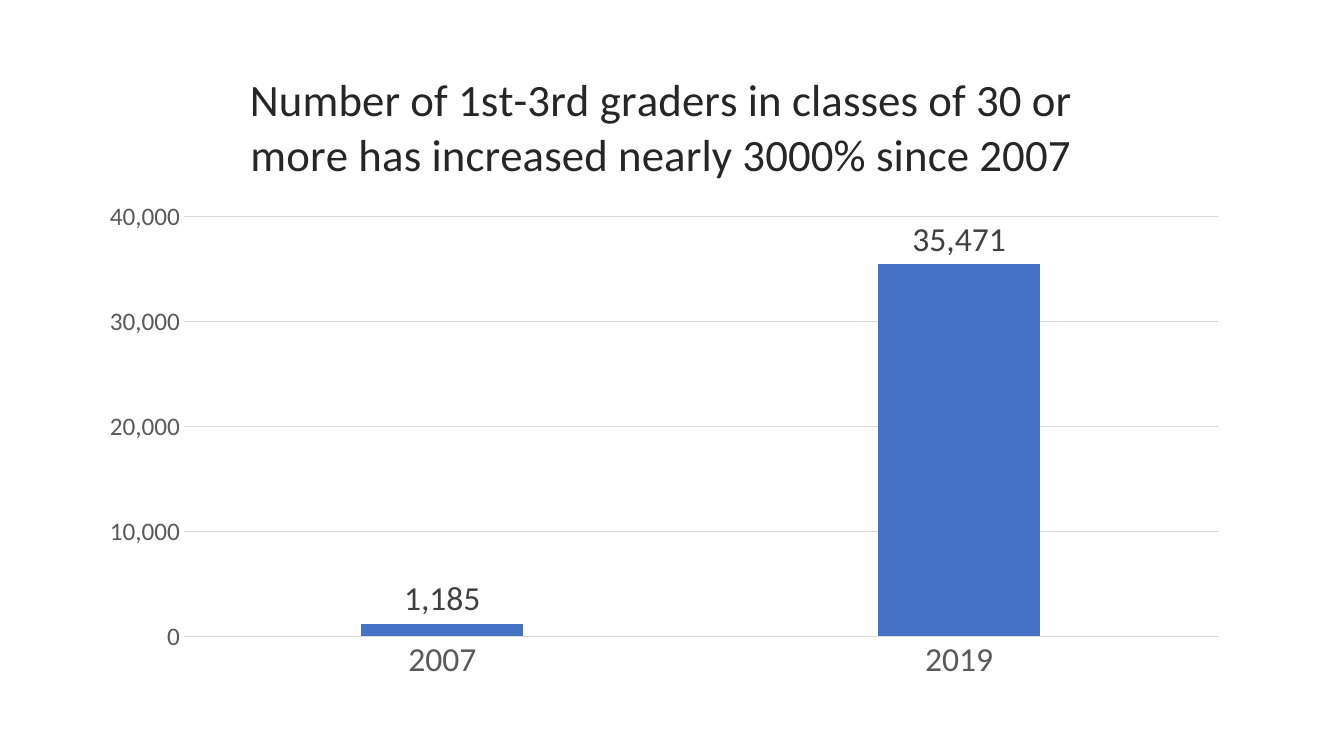
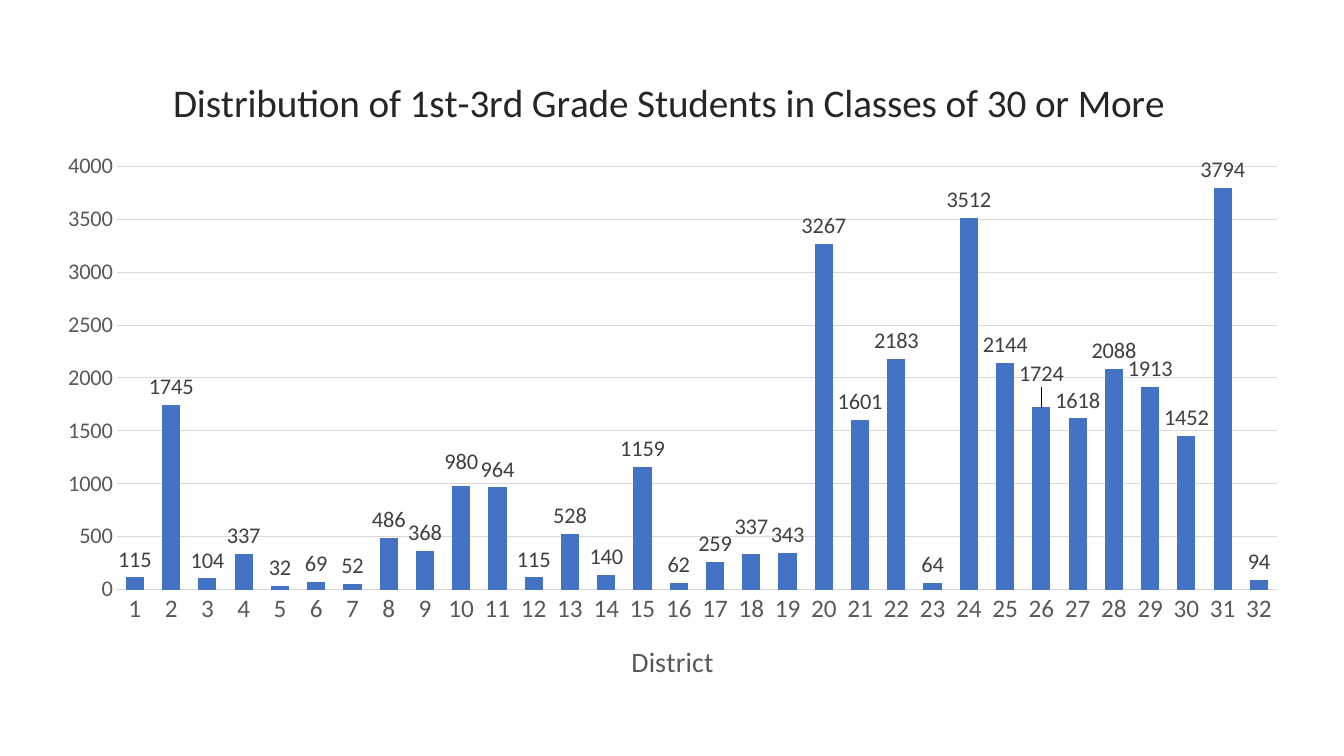
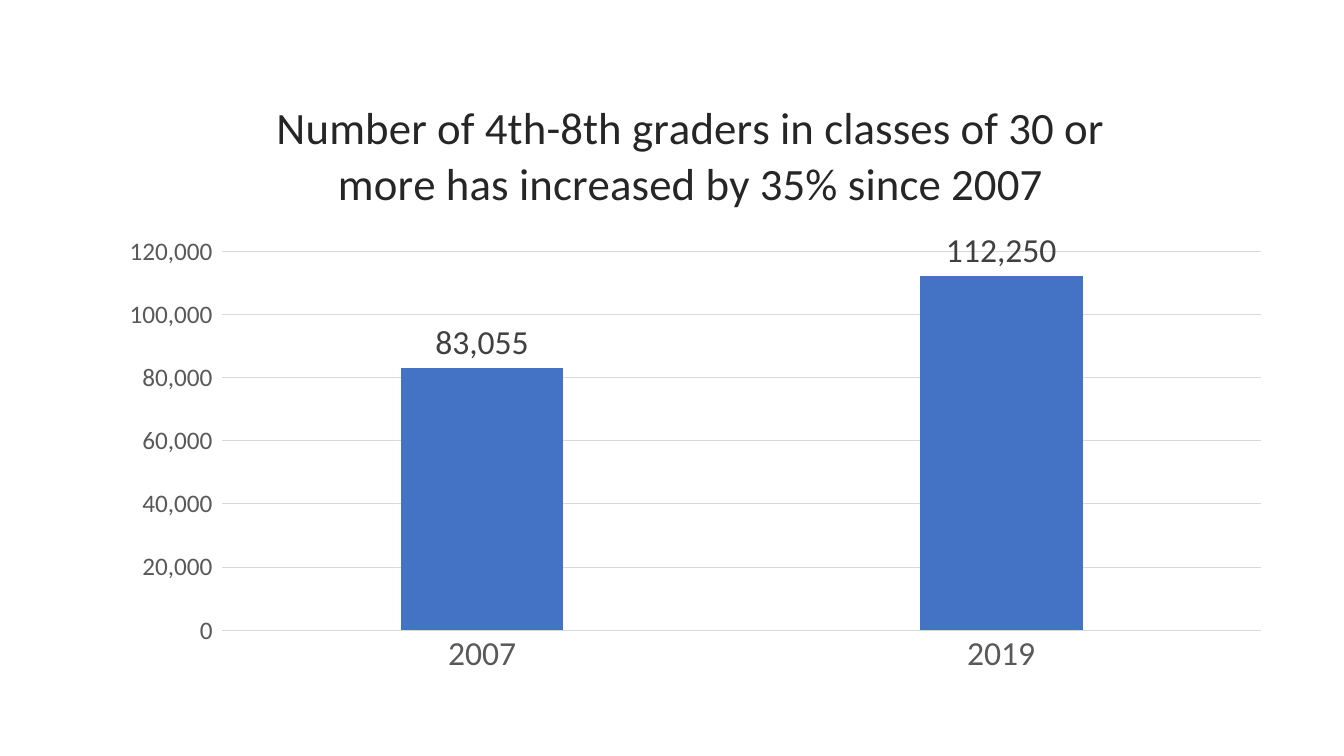
from lxml.etree import SubElement
from pptx import Presentation
from pptx.chart.data import CategoryChartData
from pptx.dml.color import RGBColor
from pptx.enum.chart import XL_CHART_TYPE, XL_LABEL_POSITION, XL_TICK_MARK
from pptx.oxml import parse_xml
from pptx.oxml.ns import nsdecls, qn
from pptx.util import Cm, Pt

# Shared style
FONT = "Calibri"
COLORS = {
    "title": "262626",
    "axis": "595959",
    "label": "404040",
    "grid": "D9D9D9",
    "bar": "4472C4",
}
THOUSANDS = "#,##0"

DISTRICT_STUDENTS = [
    115, 1745, 104, 337, 32, 69, 52, 486, 368, 980, 964,
    115, 528, 140, 1159, 62, 259, 337, 343, 3267, 1601, 2183,
    64, 3512, 2144, 1724, 1618, 2088, 1913, 1452, 3794, 94,
]
# Percent of chart height by which crowded labels move, by point index
RAISED_LABELS = {9: -0.9, 17: -1.4, 25: -2.4}


def color(name):
    return RGBColor.from_string(COLORS[name])


def style_font(font, size, color_name):
    font.name = FONT
    font.size = Pt(size)
    font.bold = False
    font.color.rgb = color(color_name)


def style_line(line):
    line.color.rgb = color("grid")
    line.width = Pt(0.75)


def set_layout(parent, index, inner=False, edge=True, **percents):
    """Give a chart part a manual layout, in percent of the chart."""
    for old in parent.findall(qn("c:layout")):
        parent.remove(old)
    layout = parse_xml(f"<c:layout {nsdecls('c')}/>")
    manual = SubElement(layout, qn("c:manualLayout"))
    if inner:
        SubElement(manual, qn("c:layoutTarget")).set("val", "inner")
    if edge:
        for mode in ("xMode", "yMode"):
            SubElement(manual, qn(f"c:{mode}")).set("val", "edge")
    for key, percent in percents.items():
        SubElement(manual, qn(f"c:{key}")).set("val", f"{percent / 100:.3f}")
    parent.insert(index, layout)


def set_title(owner, text, size, color_name):
    """Write the title of a chart or an axis."""
    frame = owner.text_frame
    frame.text = text
    style_font(frame.paragraphs[0].font, size, color_name)


def style_axes(chart, cat_size, value_size, maximum, step, number_format, tick):
    categories, values = chart.category_axis, chart.value_axis
    for axis, size in ((categories, cat_size), (values, value_size)):
        style_font(axis.tick_labels.font, size, "axis")
        axis.major_tick_mark = axis.minor_tick_mark = XL_TICK_MARK.NONE
    style_line(categories.format.line)
    values.format.line.fill.background()
    values.major_tick_mark = tick
    values.minimum_scale, values.maximum_scale = 0, maximum
    values.major_unit = step
    values.tick_labels.number_format = number_format
    values.tick_labels.number_format_is_linked = False
    values.has_major_gridlines = True
    style_line(values.major_gridlines.format.line)


def add_labels(series, size, number_format):
    labels = series.data_labels
    labels.show_value = True
    labels.position = XL_LABEL_POSITION.OUTSIDE_END
    labels.number_format = number_format
    labels.number_format_is_linked = False
    style_font(labels.font, size, "label")


def raise_labels(chart, series, shifts, size):
    """Move single labels up, clear of their neighbours."""
    for index, shift in shifts.items():
        label = series.points[index].data_label
        label.position = XL_LABEL_POSITION.OUTSIDE_END
        style_font(label.font, size, "label")
        element = chart.element.xpath(f"//c:dLbl[c:idx/@val='{index}']")[0]
        set_layout(element, 1, edge=False, x=0, y=shift)


def add_column_slide(deck, place, title, title_size, title_at, plot_at,
                     names, values, maximum, step, *, cat_size=24,
                     value_size=18, label_size=24, number_format=THOUSANDS,
                     gap=219, overlap=-27, tick=XL_TICK_MARK.NONE):
    """Add a slide that holds one column chart, and return the chart."""
    page = deck.slides.add_slide(deck.slide_layouts[6])
    data = CategoryChartData(number_format=number_format)
    data.categories = names
    data.add_series("Series 1", values)
    chart = page.shapes.add_chart(
        XL_CHART_TYPE.COLUMN_CLUSTERED, *map(Cm, place), data).chart
    chart.font.name = FONT
    chart.has_legend = False

    # Title and plot area
    set_title(chart.chart_title, title, title_size, "title")
    chart.chart_title.include_in_layout = False
    set_layout(chart.element.xpath("./c:chart/c:title")[0], 1,
               **dict(zip("xy", title_at)))
    set_layout(chart.element.xpath("./c:chart/c:plotArea")[0], 0, inner=True,
               **dict(zip("xywh", plot_at)))

    # Axes and columns
    style_axes(chart, cat_size, value_size, maximum, step, number_format, tick)
    plot = chart.plots[0]
    plot.gap_width, plot.overlap = gap, overlap
    plot.vary_by_categories = False
    series = plot.series[0]
    series.format.fill.solid()
    series.format.fill.fore_color.rgb = color("bar")
    add_labels(series, label_size, number_format)
    return chart


def main():
    deck = Presentation()
    deck.slide_width, deck.slide_height = Cm(33.87), Cm(19.05)
    years = ["2007", "2019"]

    # Grades 1 to 3
    add_column_slide(
        deck, (2.16, 1.24, 29.11, 16.26),
        "Number of 1st-3rd graders in classes of 30 or more "
        "has increased nearly 3000% since 2007",
        32, (13.5, 1.6), (8.5, 26, 89.5, 65),
        years, [1185, 35471], 40000, 10000)

    # Grades 1 to 3 by district
    districts = [str(number + 1) for number in range(len(DISTRICT_STUDENTS))]
    chart = add_column_slide(
        deck, (1.07, 1.27, 31.75, 16.51),
        "Distribution of 1st-3rd Grade Students in Classes of 30 or More",
        28, (9.8, 2.8), (5.9, 17.7, 92.1, 64.6),
        districts, DISTRICT_STUDENTS, 4000, 500,
        cat_size=18, value_size=16, label_size=16,
        number_format="General", gap=100, overlap=0)
    set_title(chart.category_axis.axis_title, "District", 20, "axis")
    raise_labels(chart, chart.plots[0].series[0], RAISED_LABELS, 16)

    # Grades 4 to 8
    add_column_slide(
        deck, (2.67, 1.73, 29.67, 15.62),
        "Number of 4th-8th graders in classes of 30 or more "
        "has increased by 35% since 2007",
        32, (13.8, 3.1), (9.9, 29.5, 88.2, 61.1),
        years, [83055, 112250], 120000, 20000, tick=XL_TICK_MARK.OUTSIDE)

    deck.save("out.pptx")


if __name__ == "__main__":
    main()
